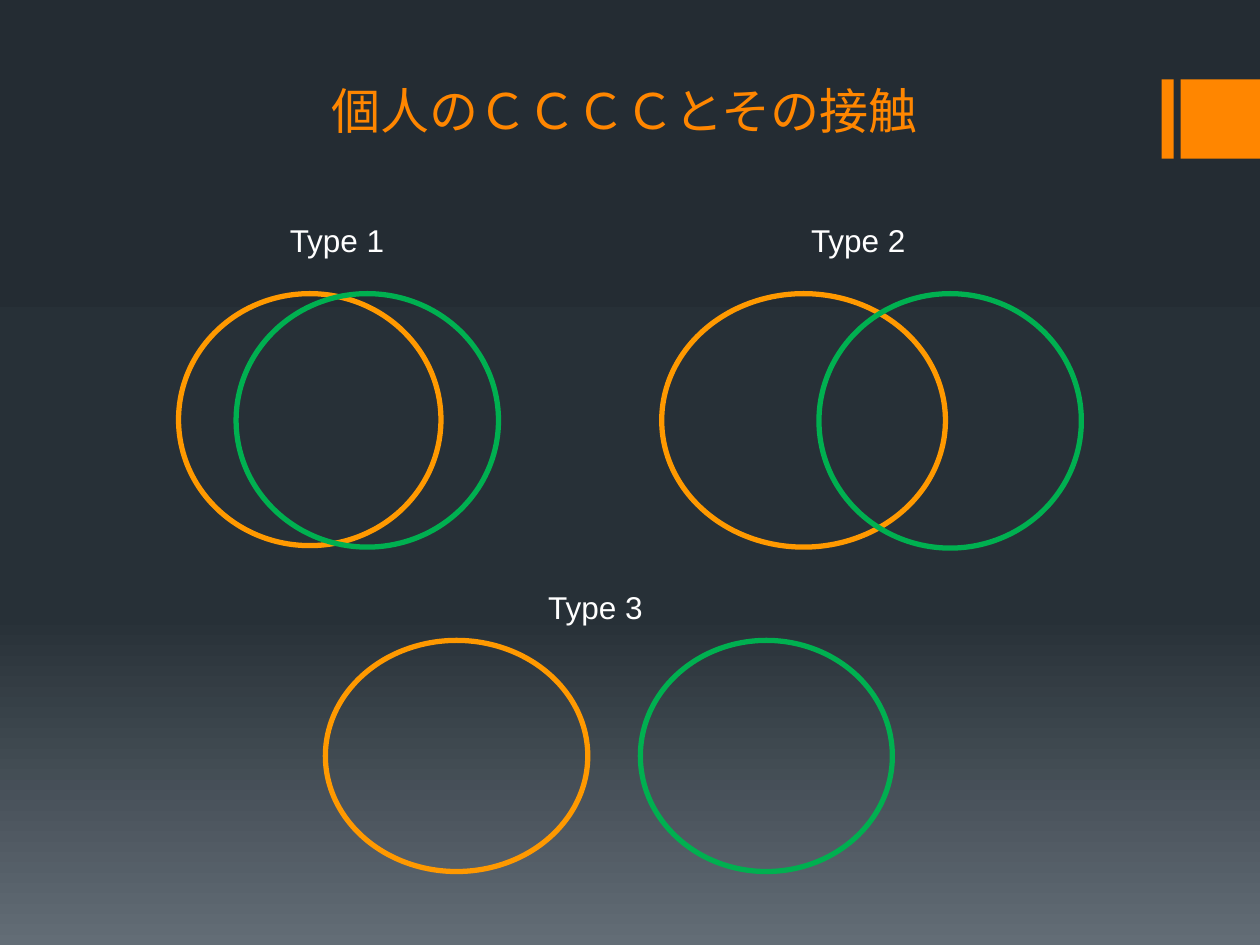
from copy import deepcopy

from pptx import Presentation
from pptx.dml.color import RGBColor
from pptx.enum.shapes import MSO_SHAPE as Shape
from pptx.enum.text import MSO_ANCHOR as Anchor, MSO_AUTO_SIZE as AutoSize, PP_ALIGN as Align
from pptx.oxml.ns import qn
from pptx.util import Cm, Pt

ACCENT, ORANGE, GREEN, WHITE = "FF8600", "FF9900", "00B050", "FFFFFF"
GRADIENT = [(0, "242C33"), (0.65, "273037"), (1, "636D76")]
BARS = [(23.42, 1.6, 0.24, 1.6), (23.8, 1.6, 1.6, 1.6)]
TYPES = [
    ("Type 1", (4.37, 4.34, 4.85, 1.02), Align.CENTER,
     (3.6, 5.92, 5.29, 5.08), (4.76, 5.92, 5.29, 5.11)),
    ("Type 2", (16.1, 4.34, 2.97, 1.07), Align.LEFT,
     (13.34, 5.92, 5.72, 5.11), (16.51, 5.92, 5.29, 5.13)),
    ("Type 3", (10.8, 11.73, 2.97, 1.02), Align.LEFT,
     (6.56, 12.91, 5.29, 4.66), (12.91, 12.91, 5.08, 4.66)),
]


def color(value):
    return RGBColor.from_string(value)


class Deck:
    """Holds the text style and the current slide."""

    def __init__(self, prs):
        self.font = {"name": "Arial", "size": Pt(18)}
        self.s = prs.slides.add_slide(prs.slide_layouts[5])

    def background(self, stops):
        fill = self.s.background.fill
        fill.gradient()
        fill.gradient_angle = 270
        gs_list = self.s.element.find(f".//{qn('a:gsLst')}")
        gs_list.insert(1, deepcopy(gs_list[0]))
        for stop, (position, value) in zip(fill.gradient_stops, stops):
            stop.position = position
            stop.color.rgb = color(value)

    def add_text(self, sp, text, value, align, **font):
        p = sp.text_frame.paragraphs[0]
        p.alignment = align
        r = p.add_run()
        r.text = text
        for name, setting in {**self.font, **font}.items():
            setattr(r.font, name, setting)
        r.font.color.rgb = color(value)

    def title(self, text, box):
        sp = self.s.shapes.title
        for name, length in zip(("left", "top", "width", "height"), box):
            setattr(sp, name, Cm(length))
        tf = sp.text_frame
        tf.vertical_anchor, tf.auto_size = Anchor.BOTTOM, AutoSize.NONE
        self.add_text(sp, text, ACCENT, Align.CENTER, size=Pt(28))

    def bar(self, box):
        sp = self.s.shapes.add_shape(Shape.RECTANGLE, *map(Cm, box))
        sp.shadow.inherit = False
        sp.fill.solid()
        sp.fill.fore_color.rgb = color(ACCENT)
        sp.line.fill.background()

    def circle(self, box, value):
        sp = self.s.shapes.add_shape(Shape.OVAL, *map(Cm, box))
        sp.shadow.inherit = False
        sp.fill.background()
        sp.line.color.rgb = color(value)
        sp.line.width = Pt(3)

    def label(self, text, box, align):
        sp = self.s.shapes.add_textbox(*map(Cm, box))
        tf = sp.text_frame
        tf.word_wrap, tf.auto_size = True, AutoSize.SHAPE_TO_FIT_TEXT
        self.add_text(sp, text, WHITE, align)


def main():
    prs = Presentation()
    prs.slide_width, prs.slide_height = Cm(25.4), Cm(19.05)
    deck = Deck(prs)
    deck.background(GRADIENT)
    for box in BARS:
        deck.bar(box)
    deck.title("個人のＣＣＣＣとその接触", (5.51, 1.47, 14.17, 1.47))
    for text, box, align, first, second in TYPES:
        deck.circle(first, ORANGE)
        deck.circle(second, GREEN)
        deck.label(text, box, align)
    prs.save("out.pptx")


if __name__ == "__main__":
    main()
